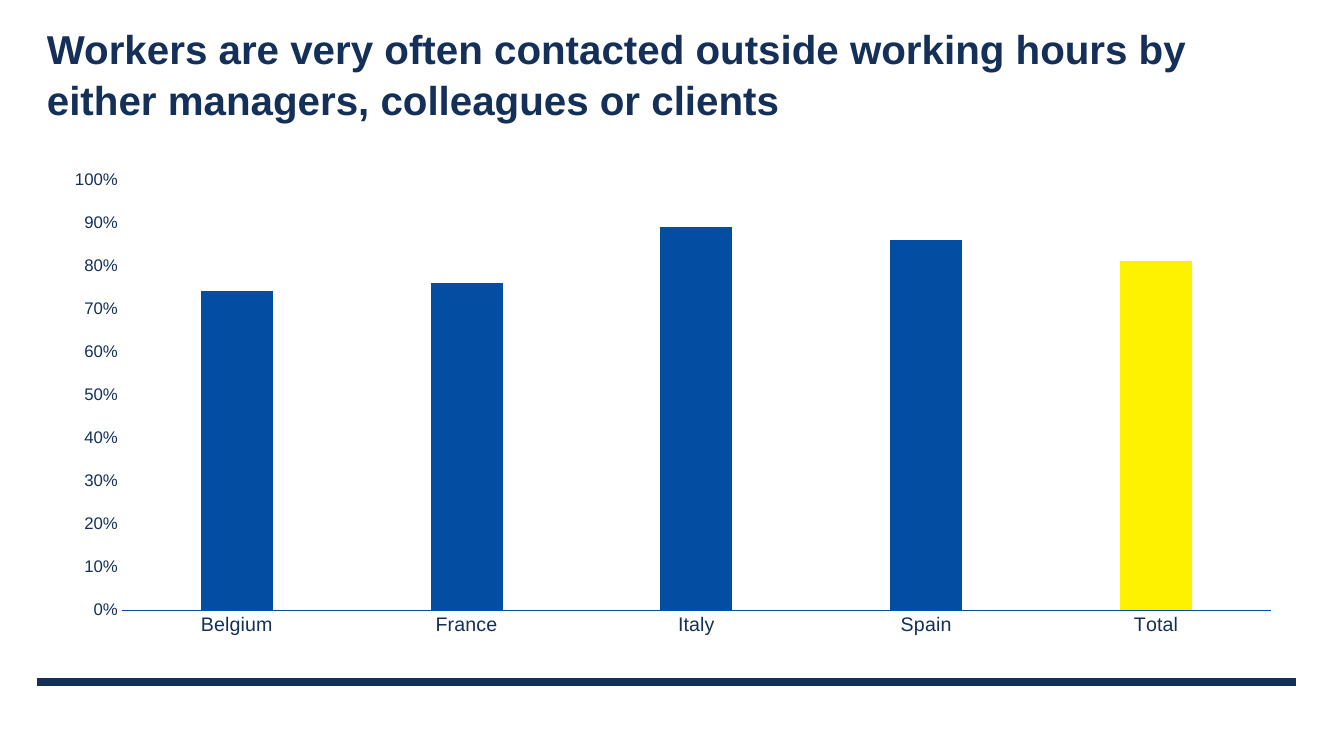
from pptx import Presentation
from pptx.chart.data import CategoryChartData
from pptx.dml.color import RGBColor
from pptx.enum.chart import XL_CHART_TYPE, XL_TICK_MARK
from pptx.enum.shapes import MSO_CONNECTOR
from pptx.enum.text import MSO_ANCHOR
from pptx.oxml import parse_xml
from pptx.oxml.ns import nsdecls, qn
from pptx.util import Emu, Pt
from lxml.etree import SubElement

NAVY = RGBColor(0x14, 0x30, 0x58)
BLUE = RGBColor(0x03, 0x4E, 0xA2)
YELLOW = RGBColor(0xFF, 0xF2, 0x00)
WHITE = RGBColor(0xFF, 0xFF, 0xFF)
SCALE = 914400 / 100.8

TITLE = ("Workers are very often contacted outside working hours by "
         "either managers, colleagues or clients")
SHARES = {"Belgium": 0.74, "France": 0.76, "Italy": 0.89,
          "Spain": 0.86, "Total": 0.81}
LAYOUT = {"x": 0.06, "y": 0.04, "w": 0.92, "h": 0.89}


def px(*sizes):
    return [Emu(round(size * SCALE)) for size in sizes]


def put(target, **format):
    for name, value in format.items():
        setattr(target, name, value)


def style(font, size, bold=False):
    put(font, name="Arial", size=Pt(size), bold=bold)
    font.color.rgb = NAVY


def stroke(line, color, width):
    line.color.rgb = color
    line.width = Pt(width)


def add_title(slide, text, box):
    frame = slide.shapes.add_textbox(*px(*box)).text_frame
    put(frame, word_wrap=True, vertical_anchor=MSO_ANCHOR.MIDDLE)
    para = frame.paragraphs[0]
    put(para, text=text, line_spacing=1.04)
    style(para.font, 28.8, True)


def add_rule(slide, ends):
    rule = slide.shapes.add_connector(MSO_CONNECTOR.STRAIGHT, *px(*ends))
    stroke(rule.line, NAVY, 6)
    SubElement(rule._element.spPr, qn("a:effectLst"))


def set_plot(chart):
    area = chart._chartSpace.chart.plotArea
    for old in area.findall(qn("c:layout")):
        area.remove(old)
    modes = "".join(f'<c:{side}Mode val="edge"/>' for side in "xy")
    sizes = "".join(f'<c:{side} val="{part}"/>'
                    for side, part in LAYOUT.items())
    area.insert(0, parse_xml(
        f'<c:layout {nsdecls("c")}><c:manualLayout>'
        f'<c:layoutTarget val="inner"/>{modes}{sizes}'
        '</c:manualLayout></c:layout>'))


def add_bars(slide, shares, box):
    data = CategoryChartData(number_format="0%")
    data.categories = list(shares)
    data.add_series("Series 1", list(shares.values()))
    chart = slide.shapes.add_chart(
        XL_CHART_TYPE.COLUMN_CLUSTERED, *px(*box), data).chart
    put(chart, has_legend=False, has_title=False)
    style(chart.font, 10)
    set_plot(chart)

    plot = chart.plots[0]
    put(plot, gap_width=219, overlap=-27, vary_by_categories=False)
    bars = plot.series[0]
    for item, color in ((bars, BLUE),
                        (bars.points[len(shares) - 1], YELLOW)):
        item.format.fill.solid()
        item.format.fill.fore_color.rgb = color

    names, scale = chart.category_axis, chart.value_axis
    for axis, size in ((names, 14), (scale, 12)):
        put(axis, major_tick_mark=XL_TICK_MARK.NONE,
            minor_tick_mark=XL_TICK_MARK.NONE)
        style(axis.tick_labels.font, size)
    stroke(names.format.line, BLUE, 0.75)
    put(scale, minimum_scale=0, maximum_scale=1, major_unit=0.1,
        has_major_gridlines=True)
    put(scale.tick_labels, number_format="0%",
        number_format_is_linked=False)
    scale.format.line.fill.background()
    stroke(scale.major_gridlines.format.line, WHITE, 0.75)


def main():
    deck = Presentation()
    width, height = px(1344, 756)
    put(deck, slide_width=width, slide_height=height)
    slide = deck.slides.add_slide(deck.slide_layouts[6])
    add_rule(slide, (37, 682, 1296, 682))
    add_title(slide, TITLE, (37, 30, 1259, 86))
    add_bars(slide, SHARES, (47, 160, 1249, 484))
    deck.save("out.pptx")


if __name__ == "__main__":
    main()
